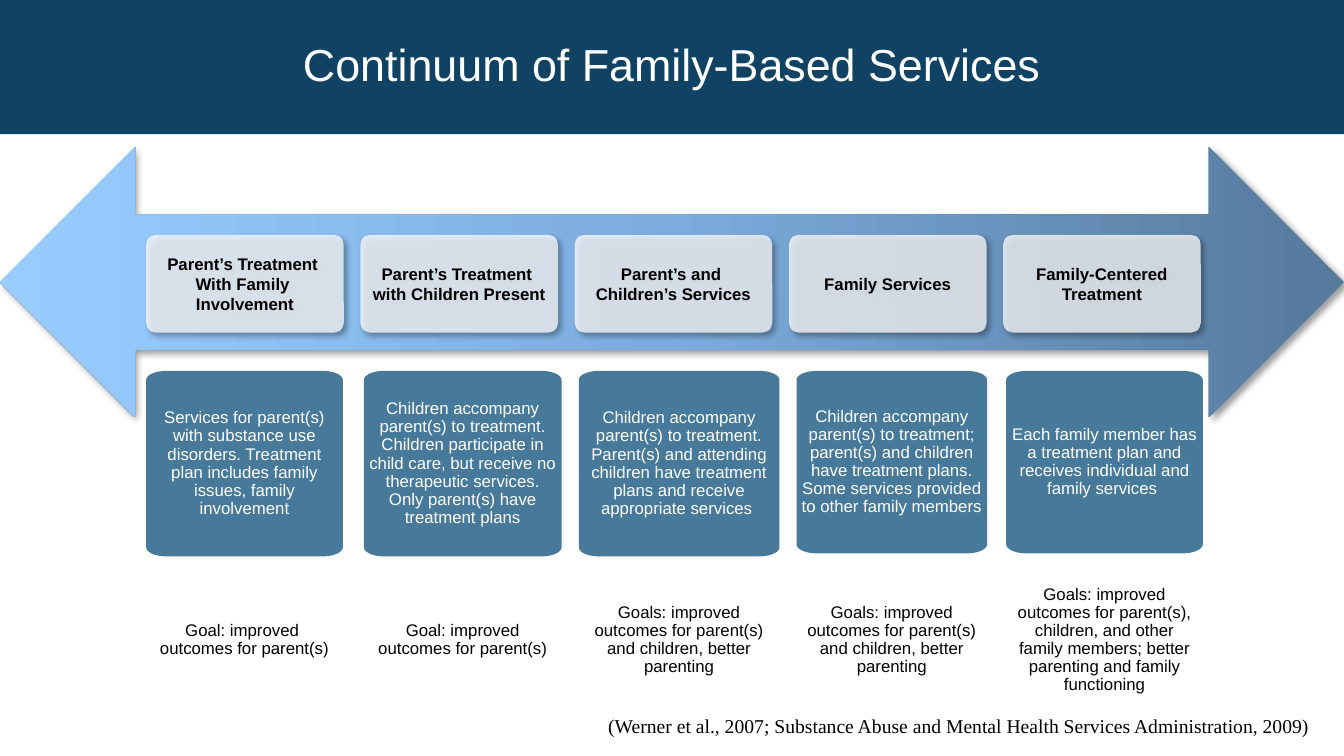
"""Build the slide on the continuum of family-based services."""
from dataclasses import dataclass
from math import cos, radians, sin

from lxml.etree import SubElement
from pptx import Presentation
from pptx.dml.color import RGBColor
from pptx.enum.shapes import MSO_SHAPE
from pptx.enum.text import MSO_ANCHOR, PP_ALIGN
from pptx.oxml import parse_xml
from pptx.oxml.ns import nsdecls, qn
from pptx.shapes.autoshape import Shape
from pptx.slide import Slide
from pptx.text.text import TextFrame
from pptx.util import Inches, Pt


@dataclass(frozen=True)
class Theme:
    band: str = "0F4263"
    detail: str = "336B90"
    light: str = "FFFFFF"
    dark: str = "000000"
    arrow: tuple[str, ...] = ("56799C", "7BACDD", "99CCFF")
    sans: str = "Arial"
    serif: str = "Times New Roman"
    title_size: int = 32
    body_size: int = 12
    citation_size: int = 14


@dataclass(frozen=True)
class Box:
    left: float
    top: float
    width: float
    height: float


@dataclass(frozen=True)
class TextStyle:
    color: str
    size: int
    font: str = "Arial"
    bold: bool = False
    align: PP_ALIGN = PP_ALIGN.CENTER
    spacing: float = 1.0
    inset_x: float = 0.05
    inset_y: float = 0.04


@dataclass(frozen=True)
class Service:
    heading: tuple[str, ...]
    detail: str
    goal: str
    left: float
    width: float
    detail_height: float = 1.84


THEME = Theme()
TITLE_STYLE = TextStyle(THEME.light, THEME.title_size, THEME.sans, spacing=0.9)
HEADING_STYLE = TextStyle(THEME.dark, THEME.body_size, THEME.sans, bold=True, inset_x=0.04, inset_y=0.03)
DETAIL_STYLE = TextStyle(THEME.light, THEME.body_size, THEME.sans, spacing=0.9)
GOAL_STYLE = TextStyle(THEME.dark, THEME.body_size, THEME.sans, spacing=0.9)
CITATION_STYLE = TextStyle(
    THEME.dark, THEME.citation_size, THEME.serif, align=PP_ALIGN.RIGHT, inset_x=0.1, inset_y=0.05
)
HEADING_LEFT, HEADING_PITCH = 1.45, 2.125

SERVICES = (
    Service(
        ("Parent’s Treatment \nWith Family ", "Involvement"),
        "Services for parent(s) with substance use disorders. Treatment plan includes family issues, "
        "family involvement",
        "Goal: improved \noutcomes for parent(s)", 1.45, 1.95,
    ),
    Service(
        ("Parent’s Treatment \nwith Children Present",),
        "Children accompany parent(s) to treatment. Children participate in child care, but receive "
        "no therapeutic services. Only parent(s) have treatment plans",
        "Goal: improved outcomes for parent(s)", 3.61, 1.96,
    ),
    Service(
        ("Parent’s and \nChildren’s Services",),
        "Children accompany parent(s) to treatment. Parent(s) and attending children have treatment "
        "plans and receive appropriate services ",
        "Goals: improved outcomes for parent(s) and children, better parenting", 5.74, 1.99,
    ),
    Service(
        ("Family Services",),
        "Children accompany parent(s) to treatment; parent(s) and children have treatment plans. "
        "Some services provided to other family members",
        "Goals: improved outcomes for parent(s) and children, better parenting", 7.9, 1.89, 1.81,
    ),
    Service(
        ("Family-Centered Treatment",),
        "Each family member has a treatment plan and receives individual and family services ",
        "Goals: improved outcomes for parent(s), children, and other family members; better "
        "parenting and family functioning", 9.98, 1.95, 1.81,
    ),
)


def inches(box: Box) -> tuple[Inches, Inches, Inches, Inches]:
    return Inches(box.left), Inches(box.top), Inches(box.width), Inches(box.height)


def write_text(frame: TextFrame, paragraphs: tuple[str, ...], style: TextStyle) -> None:
    frame.word_wrap = True
    frame.vertical_anchor = MSO_ANCHOR.MIDDLE
    frame.margin_left = frame.margin_right = Inches(style.inset_x)
    frame.margin_top = frame.margin_bottom = Inches(style.inset_y)
    for index, text in enumerate(paragraphs):
        paragraph = frame.add_paragraph() if index else frame.paragraphs[0]
        paragraph.alignment = style.align
        paragraph.line_spacing = style.spacing
        for line_index, line in enumerate(text.split("\n")):
            if line_index:
                paragraph.add_line_break()
            run = paragraph.add_run()
            run.text = line
            run.font.name = style.font
            run.font.size = Pt(style.size)
            run.font.bold = style.bold
            run.font.color.rgb = RGBColor.from_string(style.color)


def fill_shape(shape: Shape, color: str, opacity: int = 100) -> None:
    shape.fill.solid()
    shape.fill.fore_color.rgb = RGBColor.from_string(color)
    shape.line.fill.background()
    shape.shadow.inherit = False
    if opacity < 100:
        color_element = shape._element.spPr.find(f"{qn('a:solidFill')}/{qn('a:srgbClr')}")
        SubElement(color_element, qn("a:alpha"), val=str(opacity * 1000))


def add_shadow(shape: Shape) -> None:
    effects = shape._element.spPr.find(qn("a:effectLst"))
    effects.append(parse_xml(
        f'<a:outerShdw {nsdecls("a")} blurRad="{Pt(4)}" dist="{Pt(3)}" dir="2700000" algn="tl" '
        f'rotWithShape="0"><a:srgbClr val="{THEME.dark}"><a:alpha val="40000"/></a:srgbClr></a:outerShdw>'
    ))


def add_arrow(slide: Slide, box: Box) -> None:
    arrow = slide.shapes.add_shape(MSO_SHAPE.LEFT_RIGHT_ARROW, *inches(box))
    fill_shape(arrow, THEME.arrow[0])
    stops = "".join(
        f'<a:gs pos="{index * 50000}"><a:srgbClr val="{color}"/></a:gs>'
        for index, color in enumerate(THEME.arrow)
    )
    gradient = parse_xml(
        f'<a:gradFill {nsdecls("a")} rotWithShape="1"><a:gsLst>{stops}</a:gsLst>'
        '<a:lin ang="10800000" scaled="0"/></a:gradFill>'
    )
    properties = arrow._element.spPr
    properties.replace(properties.find(qn("a:solidFill")), gradient)
    add_shadow(arrow)


def add_heading(slide: Slide, box: Box, paragraphs: tuple[str, ...]) -> None:
    heading = slide.shapes.add_shape(MSO_SHAPE.ROUNDED_RECTANGLE, *inches(box))
    heading.adjustments[0] = 0.1
    fill_shape(heading, THEME.light, 75)
    add_shadow(heading)
    write_text(heading.text_frame, paragraphs, HEADING_STYLE)


def add_detail(slide: Slide, box: Box, text: str) -> None:
    radius_x, radius_y = 0.2, 0.09
    right, bottom = box.left + box.width - radius_x, box.top + box.height - radius_y
    left, top = box.left + radius_x, box.top + radius_y
    centers = ((right, bottom), (left, bottom), (left, top), (right, top))
    points = [
        (Inches(x + radius_x * cos(radians(angle))), Inches(y + radius_y * sin(radians(angle))))
        for quarter, (x, y) in enumerate(centers)
        for angle in range(quarter * 90, quarter * 90 + 91, 10)
    ]
    builder = slide.shapes.build_freeform(*points[0])
    builder.add_line_segments(points[1:], close=True)
    detail = builder.convert_to_shape()
    fill_shape(detail, THEME.detail, 90)
    write_text(detail.text_frame, (text,), DETAIL_STYLE)


def add_text(slide: Slide, box: Box, text: str, style: TextStyle) -> None:
    write_text(slide.shapes.add_textbox(*inches(box)).text_frame, (text,), style)


def main() -> None:
    presentation = Presentation()
    presentation.slide_width, presentation.slide_height = Inches(13.33), Inches(7.5)
    slide = presentation.slides.add_slide(presentation.slide_layouts[5])
    title = slide.shapes.title
    title.left, title.top, title.width, title.height = inches(Box(0, 0, 13.33, 1.33))
    title.fill.solid()
    title.fill.fore_color.rgb = RGBColor.from_string(THEME.band)
    write_text(title.text_frame, ("Continuum of Family-Based Services",), TITLE_STYLE)
    add_arrow(slide, Box(0, 1.46, 13.33, 2.68))
    for index, service in enumerate(SERVICES):
        add_heading(slide, Box(HEADING_LEFT + index * HEADING_PITCH, 2.33, 1.96, 0.97), service.heading)
        add_detail(slide, Box(service.left, 3.68, service.width, service.detail_height), service.detail)
        add_text(slide, Box(service.left, 5.75, service.width, 1.2), service.goal, GOAL_STYLE)
    citation = "(Werner et al., 2007; Substance Abuse and Mental Health Services Administration, 2009)"
    add_text(slide, Box(4.53, 7.03, 8.56, 0.34), citation, CITATION_STYLE)
    presentation.save("out.pptx")


if __name__ == "__main__":
    main()
